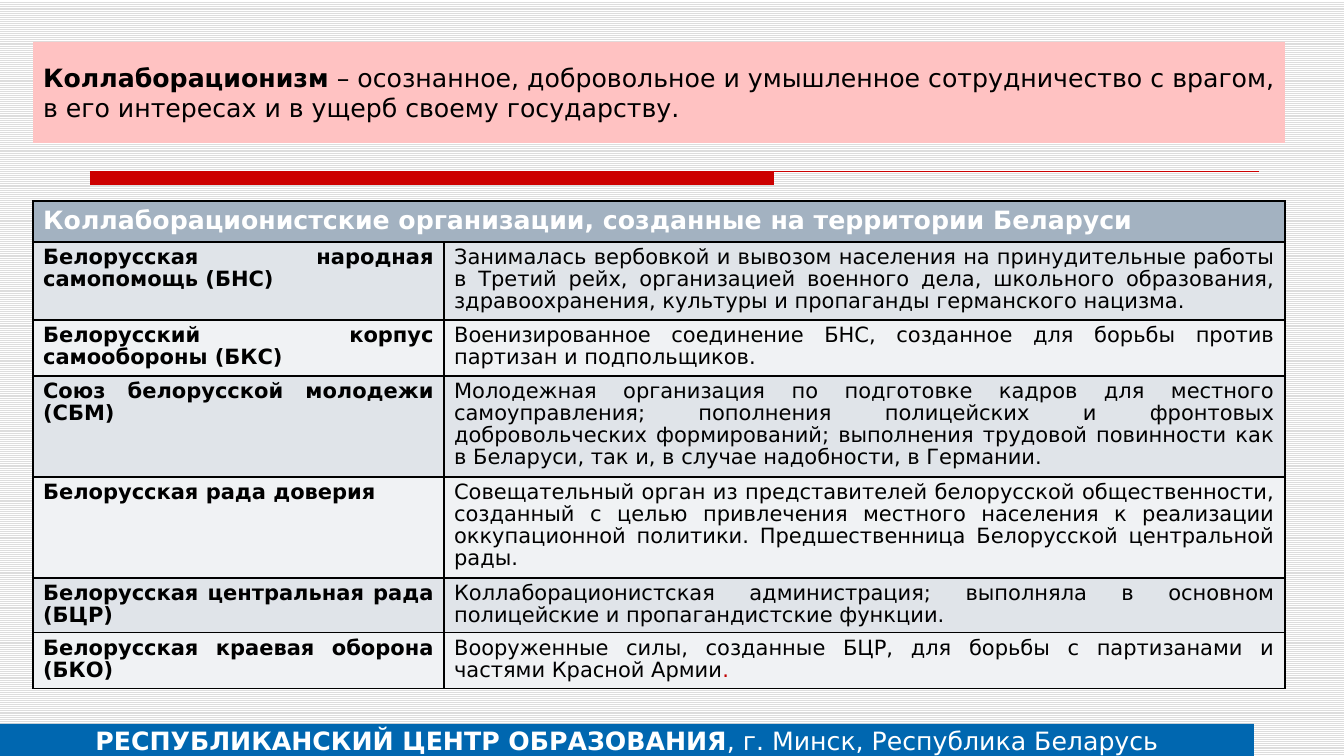
from lxml.etree import SubElement
from pptx import Presentation
from pptx.dml.color import RGBColor
from pptx.enum.dml import MSO_PATTERN
from pptx.enum.shapes import MSO_CONNECTOR, MSO_SHAPE
from pptx.enum.text import MSO_ANCHOR, MSO_AUTO_SIZE, PP_ALIGN
from pptx.oxml import parse_xml
from pptx.oxml.ns import nsdecls, qn
from pptx.util import Pt

PX = 9071  # EMU in one pixel
FONT = "DejaVu Sans"
RED, BLACK, WHITE = "CC0000", "000000", "FFFFFF"


def rgb(color):
    return RGBColor.from_string(color)


def add_run(paragraph, text, size, color, bold=False):
    run = paragraph.add_run()
    run.text = text
    run.font.name = FONT
    run.font.size = Pt(size)
    run.font.bold = bold
    run.font.color.rgb = rgb(color)


presentation = Presentation()
presentation.slide_width = 1344 * PX
presentation.slide_height = 756 * PX
slide = presentation.slides.add_slide(presentation.slide_layouts[5])

# Striped background
background = slide.background.fill
background.patterned()
background.pattern = MSO_PATTERN.LIGHT_HORIZONTAL
background.fore_color.rgb = rgb("DDDDDD")
background.back_color.rgb = rgb(WHITE)

# Definition in the title
title = slide.shapes.title
title.left, title.top, title.width, title.height = 33 * PX, 42 * PX, 1252 * PX, 101 * PX
title.fill.solid()
title.fill.fore_color.rgb = rgb("FFC2C2")
frame = title.text_frame
frame.word_wrap = True
frame.auto_size = MSO_AUTO_SIZE.NONE
frame.vertical_anchor = MSO_ANCHOR.MIDDLE
frame.margin_left = frame.margin_right = 10 * PX
frame.margin_top = frame.margin_bottom = 20 * PX
paragraph = frame.paragraphs[0]
paragraph.alignment = PP_ALIGN.JUSTIFY
add_run(paragraph, "Коллаборационизм", 18, BLACK, bold=True)
add_run(paragraph, " – осознанное, добровольное и умышленное сотрудничество с врагом, "
        "в его интересах и в ущерб своему государству.", 18, BLACK)

# Red rule: thin line with a thick start
thin_rule = slide.shapes.add_connector(
    MSO_CONNECTOR.STRAIGHT, 90 * PX, 172 * PX, 1259 * PX, 172 * PX)
thin_rule.line.color.rgb = rgb(RED)
thin_rule.line.width = Pt(0.75)
SubElement(thin_rule.line._get_or_add_ln().getparent(), qn("a:effectLst"))

# Thick rule and footer band
bands = []
for left, top, width, height, color in [(90, 172, 684, 13, RED), (0, 724, 1254, 32, "0067B0")]:
    band = slide.shapes.add_shape(
        MSO_SHAPE.RECTANGLE, left * PX, top * PX, width * PX, height * PX)
    band.shadow.inherit = False
    band.fill.solid()
    band.fill.fore_color.rgb = rgb(color)
    band.line.fill.background()
    bands.append(band)

footer = bands[-1].text_frame
footer.word_wrap = True
footer.vertical_anchor = MSO_ANCHOR.MIDDLE
paragraph = footer.paragraphs[0]
paragraph.alignment = PP_ALIGN.CENTER
add_run(paragraph, "РЕСПУБЛИКАНСКИЙ ЦЕНТР ОБРАЗОВАНИЯ", 18, WHITE, bold=True)
add_run(paragraph, ", г. Минск, Республика Беларусь", 18, WHITE)

# Table of organizations: height, name, description
organizations = [
    (78, "Белорусская народная самопомощь (БНС)",
     "Занималась вербовкой и вывозом населения на принудительные работы в Третий рейх, "
     "организацией военного дела, школьного образования, здравоохранения, культуры "
     "и пропаганды германского нацизма."),
    (56, "Белорусский корпус самообороны (БКС)",
     "Военизированное соединение БНС, созданное для борьбы против партизан и подпольщиков."),
    (101, "Союз белорусской молодежи (СБМ)",
     "Молодежная организация по подготовке кадров для местного самоуправления; пополнения "
     "полицейских и фронтовых добровольческих формирований; выполнения трудовой повинности "
     "как в Беларуси, так и, в случае надобности, в Германии."),
    (101, "Белорусская рада доверия",
     "Совещательный орган из представителей белорусской общественности, созданный с целью "
     "привлечения местного населения к реализации оккупационной политики. "
     "Предшественница Белорусской центральной рады."),
    (55, "Белорусская центральная рада (БЦР)",
     "Коллаборационистская администрация; выполняла в основном "
     "полицейские и пропагандистские функции."),
    (56, "Белорусская краевая оборона (БКО)",
     "Вооруженные силы, созданные БЦР, для борьбы с партизанами и частями Красной Армии"),
]
table = slide.shapes.add_table(
    len(organizations) + 1, 2, 33 * PX, 201 * PX, 1252 * PX, 488 * PX).table
table.first_row = table.horz_banding = False
table.columns[0].width = 411 * PX
table.columns[1].width = 841 * PX

# Header row
table.rows[0].height = 41 * PX
table.cell(0, 0).merge(table.cell(0, 1))
add_run(table.cell(0, 0).text_frame.paragraphs[0],
        "Коллаборационистские организации, созданные на территории Беларуси",
        18, WHITE, bold=True)

# Body rows
for row, (height, *texts) in enumerate(organizations, start=1):
    table.rows[row].height = height * PX
    for column, text in enumerate(texts):
        paragraph = table.cell(row, column).text_frame.paragraphs[0]
        paragraph.alignment = PP_ALIGN.JUSTIFY
        paragraph.line_spacing = 0.9
        add_run(paragraph, text, 15, BLACK, bold=column == 0)
add_run(paragraph, ".", 15, "C00000")

# Cell borders and fills
for row in range(len(table.rows)):
    color = "A3B2C1" if row == 0 else "E0E4E9" if row % 2 else "F0F2F4"
    for column in range(2):
        cell = table.cell(row, column)
        properties = cell._tc.get_or_add_tcPr()
        for side in ("lnL", "lnR", "lnT", "lnB"):
            properties.append(parse_xml(
                f'<a:{side} {nsdecls("a")} w="{Pt(1)}"><a:solidFill>'
                f'<a:srgbClr val="{BLACK}"/></a:solidFill></a:{side}>'))
        cell.fill.solid()
        cell.fill.fore_color.rgb = rgb(color)

presentation.save("out.pptx")
